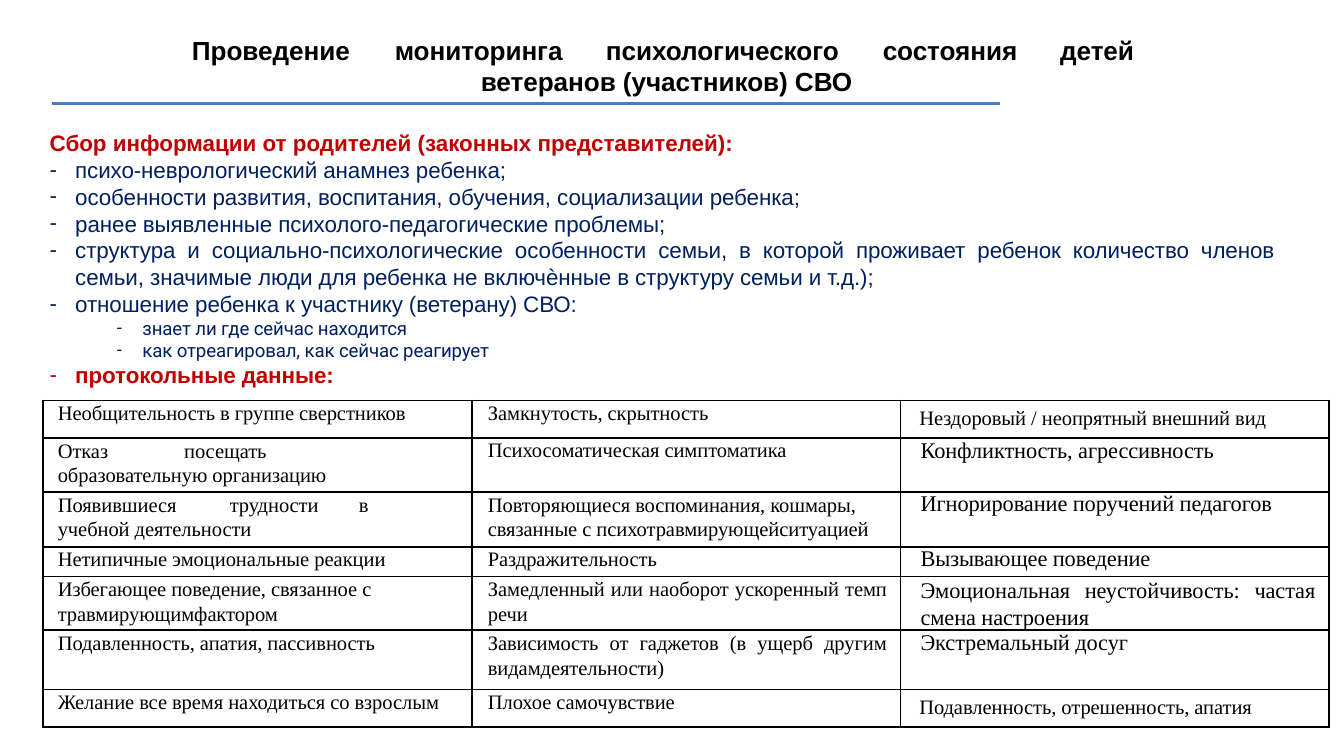
import pptx
import pptx.dml.color
import pptx.enum.shapes
import pptx.enum.text
import pptx.oxml.ns
import pptx.util
import lxml.etree
from dataclasses import dataclass

Inches = pptx.util.Inches
Pt = pptx.util.Pt
qn = pptx.oxml.ns.qn
Align = pptx.enum.text.PP_ALIGN


@dataclass(frozen=True)
class Theme:
    ink: str = "000000"
    navy: str = "002060"
    red: str = "C00000"
    rule: str = "4480C2"
    sans: str = "Arial"
    detail_font: str = "Roboto"
    serif: str = "Times New Roman"
    title_size: int = 14
    body_size: int = 12
    cell_size: int = 11
    detail_size: int = 10


theme = Theme()


def write(paragraph, text, *, size, font, color, bold=False, align=Align.LEFT, before=0,
          leading=None, left=0, hanging=0, bullet=None, tabs=(), tracking=-0.05):
    paragraph.text = text
    paragraph.alignment = align
    paragraph.space_before = Pt(before)
    paragraph.space_after = Pt(0)
    paragraph.line_spacing = Pt(leading) if leading else 1.0
    properties = paragraph._p.get_or_add_pPr()
    properties.set("marL", str(Inches(left)))
    if bullet:
        properties.set("indent", str(-Inches(hanging)))
        lxml.etree.SubElement(properties, qn("a:buFont"), typeface=font)
        lxml.etree.SubElement(properties, qn("a:buChar"), char=bullet)
    if tabs:
        stops = lxml.etree.SubElement(properties, qn("a:tabLst"))
        for position in tabs:
            lxml.etree.SubElement(stops, qn("a:tab"), pos=str(Inches(position)), algn="l")
    for run in paragraph.runs:
        run.font.size = Pt(size)
        run.font.name = font
        run.font.bold = bold
        run.font.color.rgb = pptx.dml.color.RGBColor.from_string(color)
        run._r.get_or_add_rPr().set("spc", str(round(tracking * 100)))


def place(shape, left, top, width, height):
    shape.left, shape.top = Inches(left), Inches(top)
    shape.width, shape.height = Inches(width), Inches(height)
    frame = shape.text_frame
    frame.word_wrap = True
    frame.auto_size = pptx.enum.text.MSO_AUTO_SIZE.NONE
    frame.vertical_anchor = pptx.enum.text.MSO_ANCHOR.TOP
    frame.margin_left = frame.margin_right = frame.margin_bottom = 0
    frame.margin_top = Inches(0.01)
    return frame


deck = pptx.Presentation()
deck.slide_width = Inches(10)
deck.slide_height = Inches(10 * 9 / 16)
slide = deck.slides.add_slide(deck.slide_layouts[1])

title = place(slide.shapes.title, 0.33, 0.24, 9.25, 0.5)
write(title.paragraphs[0],
      "Проведение\tмониторинга\tпсихологического\tсостояния\tдетей \vветеранов (участников) СВО",
      size=theme.title_size, font=theme.sans, color=theme.ink, bold=True, align=Align.CENTER,
      before=1.1, leading=17, left=0.01, tabs=(1.51, 3.08, 5.14, 6.46))

title_rule = slide.shapes.add_connector(
    pptx.enum.shapes.MSO_CONNECTOR.STRAIGHT, Inches(0.39), Inches(0.77), Inches(7.44), Inches(0.77))
title_rule.line.color.rgb = pptx.dml.color.RGBColor.from_string(theme.rule)
title_rule.line.width = Pt(1.5)
lxml.etree.SubElement(title_rule._element.spPr, qn("a:effectLst"))

heading = place(slide.shapes.add_textbox(0, 0, 0, 0), 0.36, 0.95, 5.17, 0.23)
write(heading.paragraphs[0], "Сбор информации от родителей (законных представителей):",
      size=theme.body_size, font=theme.sans, color=theme.red, bold=True, before=1, left=0.01,
      tracking=0)

topic = dict(size=theme.body_size, font=theme.sans, color=theme.navy, leading=14.4, left=0.2)
detail = dict(size=theme.detail_size, font=theme.detail_font, color=theme.navy,
              leading=11.9, left=0.7)
topics = [
    ("психо-неврологический анамнез ребенка;", topic | dict(before=1)),
    ("особенности развития, воспитания, обучения, социализации ребенка;", topic),
    ("ранее выявленные психолого-педагогические проблемы;", topic),
    ("структура и социально-психологические особенности семьи, в которой проживает ребенок "
     "количество членов семьи, значимые люди для ребенка не включѐнные в структуру семьи и т.д.);",
     topic | dict(align=Align.JUSTIFY)),
    ("отношение ребенка к участнику (ветерану) СВО:", topic),
    ("знает ли где сейчас находится", detail),
    ("как отреагировал, как сейчас реагирует", detail),
    ("протокольные данные:", topic | dict(color=theme.red, bold=True)),
]
collection = place(slide.placeholders[1], 0.36, 1.15, 9.47, 1.76)
collection.margin_right = Inches(0.34)
for index, (text, style) in enumerate(topics):
    paragraph = collection.paragraphs[0] if index == 0 else collection.add_paragraph()
    paragraph.level = 1 if style is detail else 0
    write(paragraph, text, hanging=0.19, bullet="-", **style)

signs = [
    ("Необщительность в группе сверстников", "Замкнутость, скрытность",
     "Нездоровый / неопрятный внешний вид"),
    ("Отказ\tпосещать\tобразовательную организацию", "Психосоматическая симптоматика",
     "Конфликтность, агрессивность"),
    ("Появившиеся\tтрудности\tв\tучебной деятельности",
     "Повторяющиеся воспоминания, кошмары, связанные с психотравмирующейситуацией",
     "Игнорирование поручений педагогов"),
    ("Нетипичные эмоциональные реакции", "Раздражительность", "Вызывающее поведение"),
    ("Избегающее поведение, связанное с травмирующимфактором",
     "Замедленный или наоборот ускоренный темп речи",
     "Эмоциональная неустойчивость: частая смена настроения"),
    ("Подавленность, апатия, пассивность",
     "Зависимость от гаджетов (в ущерб другим видамдеятельности)", "Экстремальный досуг"),
    ("Желание все время находиться со взрослым", "Плохое самочувствие",
     "Подавленность, отрешенность, апатия"),
]
row_heights = (0.28, 0.4, 0.41, 0.22, 0.4, 0.44, 0.28)
column_styles = [
    dict(size=theme.cell_size, leading=13, left=0.11),
    dict(size=theme.cell_size, leading=13, left=0.12),
    dict(size=theme.body_size, before=0.1, left=0.15),
]
lowered = dict(size=theme.cell_size, before=3.4, left=0.14)
two_lines = dict(leading=13.2, before=0.2)
justified = two_lines | dict(align=Align.JUSTIFY)
exceptions = {
    (0, 2): lowered,
    (1, 0): two_lines | dict(tabs=(0.94, 1.99)),
    (2, 0): two_lines | dict(tabs=(1.28, 2.24, 2.59)),
    (2, 1): two_lines,
    (4, 0): two_lines,
    (4, 1): justified,
    (4, 2): dict(leading=14.4, before=0, align=Align.JUSTIFY),
    (5, 1): justified,
    (6, 2): lowered,
}

protocol = slide.shapes.add_table(len(signs), 3, Inches(0.32), Inches(2.98),
                                  Inches(9.58), Inches(sum(row_heights))).table
protocol.first_row = protocol.horz_banding = False
for column in protocol.columns:
    column.width = Inches(3.19)
for row, height in enumerate(row_heights):
    protocol.rows[row].height = Inches(height)
    for column, text in enumerate(signs[row]):
        cell = protocol.cell(row, column)
        exception = exceptions.get((row, column), {})
        style = column_styles[column] | exception
        cell.margin_left = cell.margin_bottom = 0
        cell.margin_top = Inches(0.05 if exception is lowered else 0)
        cell.margin_right = Inches(0.2 if "tabs" in style else 0.1)
        write(cell.text_frame.paragraphs[0], text, font=theme.serif, color=theme.ink, **style)
        cell_properties = cell._tc.get_or_add_tcPr()
        for side in ("a:lnL", "a:lnR", "a:lnT", "a:lnB"):
            border = lxml.etree.SubElement(cell_properties, qn(side), w=str(Pt(1)))
            border_fill = lxml.etree.SubElement(border, qn("a:solidFill"))
            lxml.etree.SubElement(border_fill, qn("a:srgbClr"), val=theme.ink)
        cell.fill.background()

deck.save("out.pptx")
